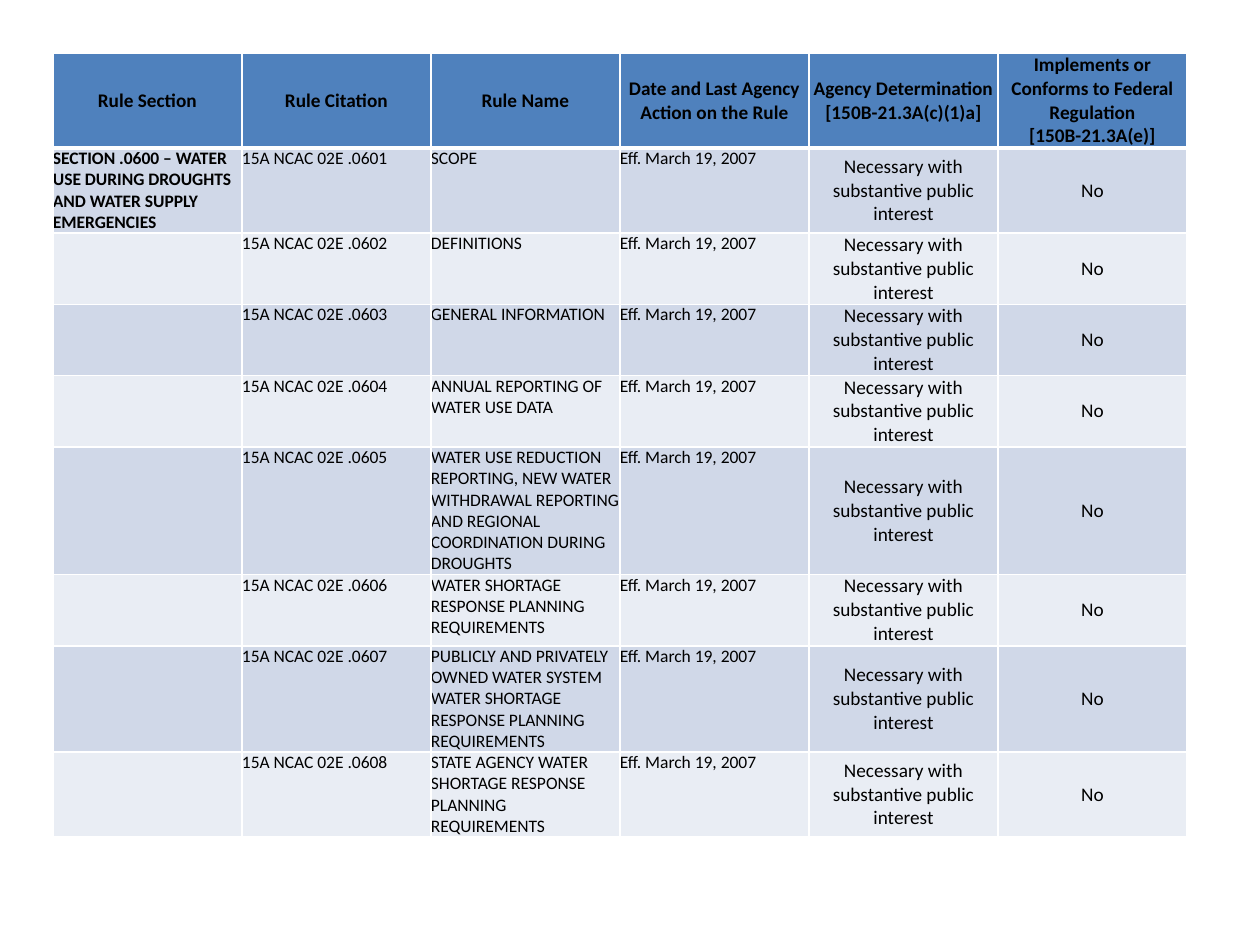
from dataclasses import dataclass

from lxml import etree
from pptx import Presentation
from pptx.dml.color import RGBColor
from pptx.enum.text import MSO_ANCHOR, PP_ALIGN
from pptx.oxml.ns import qn
from pptx.table import Table, _Cell
from pptx.util import Inches, Pt

CENTER, LEFT = PP_ALIGN.CENTER, PP_ALIGN.LEFT
MIDDLE, TOP = MSO_ANCHOR.MIDDLE, MSO_ANCHOR.TOP


@dataclass(frozen=True)
class Theme:
    font: str = "Calibri"
    ink: str = "000000"
    header: str = "4F81BD"
    bands: tuple[str, str] = ("D0D8E8", "E9EDF4")
    border: str = "FFFFFF"
    thin: float = 1
    thick: float = 3
    large: float = 11
    small: float = 10


@dataclass(frozen=True)
class CellStyle:
    size: float
    bold: bool = False
    centered: bool = False


@dataclass(frozen=True)
class Rule:
    number: str
    name: str
    section: str = ""
    action: str = "Eff. March 19, 2007"
    determination: str = "Necessary with substantive public interest"
    federal: str = "No"

    def values(self) -> list[str]:
        citation = f"15A NCAC 02E .{self.number}"
        return [self.section, citation, self.name, self.action,
                self.determination, self.federal]


THEME = Theme()
HEADING = CellStyle(THEME.large, bold=True, centered=True)
SECTION = CellStyle(THEME.small, bold=True)
DETAIL = CellStyle(THEME.small)
FINDING = CellStyle(THEME.large, centered=True)
COLUMN_STYLES = [SECTION, DETAIL, DETAIL, DETAIL, FINDING, FINDING]

HEADINGS = [
    "Rule Section",
    "Rule Citation",
    "Rule Name",
    "Date and Last Agency Action on the Rule",
    "Agency Determination [150B-21.3A(c)(1)a]",
    "Implements or Conforms to Federal Regulation [150B-21.3A(e)]",
]
RULES = [
    Rule("0601", "SCOPE",
         "SECTION .0600 – WATER USE DURING DROUGHTS AND WATER SUPPLY EMERGENCIES"),
    Rule("0602", "DEFINITIONS"),
    Rule("0603", "GENERAL INFORMATION"),
    Rule("0604", "ANNUAL REPORTING OF WATER USE DATA"),
    Rule("0605", "WATER USE REDUCTION REPORTING, NEW WATER WITHDRAWAL REPORTING "
                 "AND REGIONAL COORDINATION DURING DROUGHTS"),
    Rule("0606", "WATER SHORTAGE RESPONSE PLANNING REQUIREMENTS"),
    Rule("0607", "PUBLICLY AND PRIVATELY OWNED WATER SYSTEM WATER SHORTAGE "
                 "RESPONSE PLANNING REQUIREMENTS"),
    Rule("0608", "STATE AGENCY WATER SHORTAGE RESPONSE PLANNING REQUIREMENTS"),
]


def draw_borders(cell: _Cell, top: float, bottom: float) -> None:
    """Line all four sides; must run before the fill, which follows in the schema."""
    properties = cell._tc.get_or_add_tcPr()
    sides = {"lnL": THEME.thin, "lnR": THEME.thin, "lnT": top, "lnB": bottom}
    for side, width in sides.items():
        line = etree.SubElement(properties, qn(f"a:{side}"), w=str(Pt(width)))
        fill = etree.SubElement(line, qn("a:solidFill"))
        etree.SubElement(fill, qn("a:srgbClr"), val=THEME.border)


def write_text(cell: _Cell, text: str, style: CellStyle) -> None:
    cell.margin_left = cell.margin_right = Inches(0)
    cell.margin_top = cell.margin_bottom = Inches(0)
    cell.vertical_anchor = MIDDLE if style.centered else TOP
    para = cell.text_frame.paragraphs[0]
    para.alignment = CENTER if style.centered else LEFT
    span = para.add_run()
    span.text = text
    span.font.name = THEME.font
    span.font.size = Pt(style.size)
    span.font.bold = style.bold
    span.font.color.rgb = RGBColor.from_string(THEME.ink)


def fill_row(table: Table, row: int, values: list[str],
             styles: list[CellStyle], color: str) -> None:
    top = THEME.thick if row == 1 else THEME.thin
    bottom = THEME.thick if row == 0 else THEME.thin
    for column, (text, style) in enumerate(zip(values, styles)):
        cell = table.cell(row, column)
        draw_borders(cell, top, bottom)
        cell.fill.solid()
        cell.fill.fore_color.rgb = RGBColor.from_string(color)
        if text:
            write_text(cell, text, style)


def main() -> None:
    deck = Presentation()
    deck.slide_width, deck.slide_height = Inches(10), Inches(7.5)
    page = deck.slides.add_slide(deck.slide_layouts[6])

    height = Inches(7.22)
    frame = page.shapes.add_table(len(RULES) + 1, len(HEADINGS), Inches(0.42),
                                  Inches(0.42), Inches(9), height)
    table = frame.table
    for row in table.rows:
        row.height = Inches(0.41)  # minimum; rows grow to fit their text
    frame.height = height

    fill_row(table, 0, HEADINGS, [HEADING] * len(HEADINGS), THEME.header)
    for index, rule in enumerate(RULES):
        fill_row(table, index + 1, rule.values(), COLUMN_STYLES,
                 THEME.bands[index % 2])

    deck.save("out.pptx")


if __name__ == "__main__":
    main()
